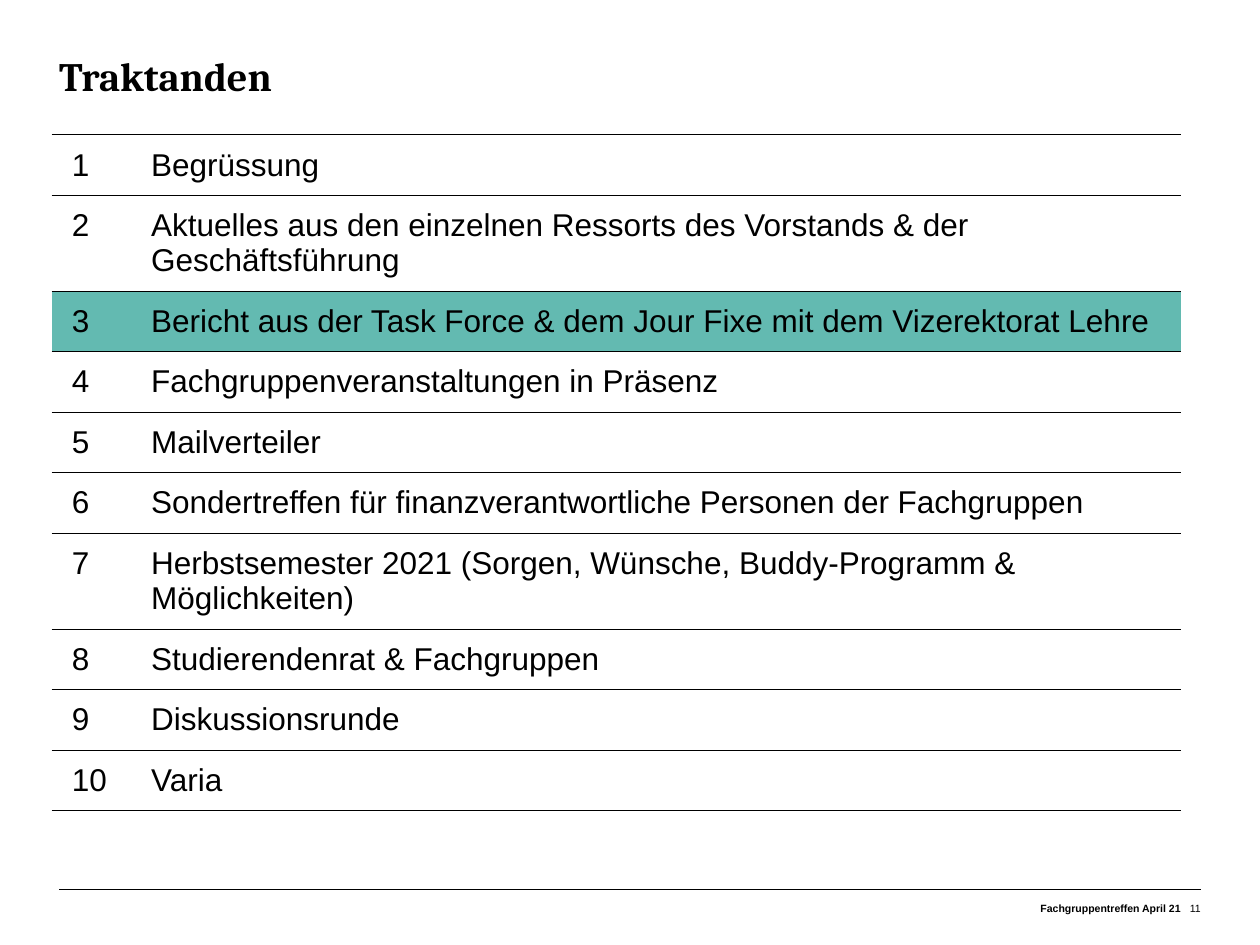
from lxml import etree
from pptx import Presentation, util as u
from pptx.dml.color import RGBColor
from pptx.enum import shapes, text
from pptx.oxml import ns

BLACK = RGBColor(0x00, 0x00, 0x00)
WHITE = RGBColor(0xFF, 0xFF, 0xFF)
TEAL = RGBColor(0x63, 0xBA, 0xB1)

AGENDA = [
    "Begrüssung",
    "Aktuelles aus den einzelnen Ressorts des Vorstands & der Geschäftsführung",
    "Bericht aus der Task Force & dem Jour Fixe mit dem Vizerektorat Lehre",
    "Fachgruppenveranstaltungen in Präsenz",
    "Mailverteiler",
    "Sondertreffen für finanzverantwortliche Personen der Fachgruppen",
    "Herbstsemester 2021 (Sorgen, Wünsche, Buddy-Programm & Möglichkeiten)",
    "Studierendenrat & Fachgruppen",
    "Diskussionsrunde",
    "Varia",
]
CURRENT_ITEM = 3


class AgendaSlide:
    heading_font = "Cambria"
    body_font = "Arial"

    def __init__(self, slide):
        self.slide = slide

    def add_run(self, paragraph, wording, size, font=body_font, bold=False):
        run = paragraph.add_run()
        run.text = wording
        run.font.name = font
        run.font.size = u.Pt(size)
        run.font.bold = bold
        run.font.color.rgb = BLACK

    def set_frame(self, frame, top_inset=0):
        """Wrap at the top of the box, without side or bottom insets."""
        frame.word_wrap = True
        frame.auto_size = text.MSO_AUTO_SIZE.NONE
        frame.vertical_anchor = text.MSO_ANCHOR.TOP
        frame.margin_left = frame.margin_right = frame.margin_bottom = 0
        frame.margin_top = u.Inches(top_inset)

    def title(self, wording, left, top, width, height):
        title = self.slide.shapes.title
        title.left, title.top = u.Inches(left), u.Inches(top)
        title.width, title.height = u.Inches(width), u.Inches(height)
        self.set_frame(title.text_frame)
        paragraph = title.text_frame.paragraphs[0]
        paragraph.alignment = text.PP_ALIGN.LEFT
        paragraph.line_spacing = u.Pt(25)
        self.add_run(paragraph, wording, 23, self.heading_font, bold=True)

    def rule(self, left, right, y):
        line = self.slide.shapes.add_connector(
            shapes.MSO_CONNECTOR.STRAIGHT,
            u.Inches(left), u.Inches(y), u.Inches(right), u.Inches(y))
        line.line.color.rgb = BLACK
        line.line.width = u.Pt(0.25)
        etree.SubElement(line._element.spPr, ns.qn("a:effectLst"))

    def footer(self, wording, left, width, bold=False):
        box = self.slide.shapes.add_textbox(
            u.Inches(left), u.Inches(7.14), u.Inches(width), u.Inches(0.2))
        self.set_frame(box.text_frame, top_inset=0.02)
        paragraph = box.text_frame.paragraphs[0]
        paragraph.alignment = text.PP_ALIGN.RIGHT
        self.add_run(paragraph, wording, 6, bold=bold)

    def cell_borders(self, cell):
        """Draw thin lines above and below the cell and none at its sides."""
        properties = cell._tc.get_or_add_tcPr()
        for position, side in enumerate(("lnL", "lnR", "lnT", "lnB")):
            border = etree.Element(ns.qn(f"a:{side}"), w=str(u.Pt(0.5)))
            if side in ("lnT", "lnB"):
                fill = etree.SubElement(border, ns.qn("a:solidFill"))
                etree.SubElement(fill, ns.qn("a:srgbClr"), val=str(BLACK))
            else:
                etree.SubElement(border, ns.qn("a:noFill"))
            properties.insert(position, border)

    def cell(self, cell, wording, colour):
        cell.margin_left = cell.margin_right = u.Inches(0.16)
        cell.margin_top = cell.margin_bottom = u.Inches(0.1)
        cell.fill.solid()
        cell.fill.fore_color.rgb = colour
        self.cell_borders(cell)
        self.add_run(cell.text_frame.paragraphs[0], wording, 18)

    def agenda(self, items, current, left, top, column_widths, row_height):
        table = self.slide.shapes.add_table(
            len(items), len(column_widths), u.Inches(left), u.Inches(top),
            u.Inches(sum(column_widths)), u.Inches(row_height * len(items))).table
        table.first_row = table.horz_banding = False
        for column, width in zip(table.columns, column_widths):
            column.width = u.Inches(width)
        for number, (row, item) in enumerate(zip(table.rows, items), start=1):
            row.height = u.Inches(row_height)
            colour = TEAL if number == current else WHITE
            for cell, wording in zip(row.cells, (str(number), item)):
                self.cell(cell, wording, colour)


def main():
    deck = Presentation()
    deck.slide_width, deck.slide_height = u.Inches(10), u.Inches(7.5)
    page = AgendaSlide(deck.slides.add_slide(deck.slide_layouts.get_by_name("Title Only")))
    page.rule(0.47, 9.53, 7.06)
    page.title("Traktanden", 0.47, 0.44, 9.06, 0.83)
    page.footer("Fachgruppentreffen April 21", 7.28, 2.09, bold=True)
    page.footer("11", 9.37, 0.16)
    page.agenda(AGENDA, CURRENT_ITEM, 0.41, 1.07, (0.63, 8.33), 0.41)
    deck.save("out.pptx")


if __name__ == "__main__":
    main()
